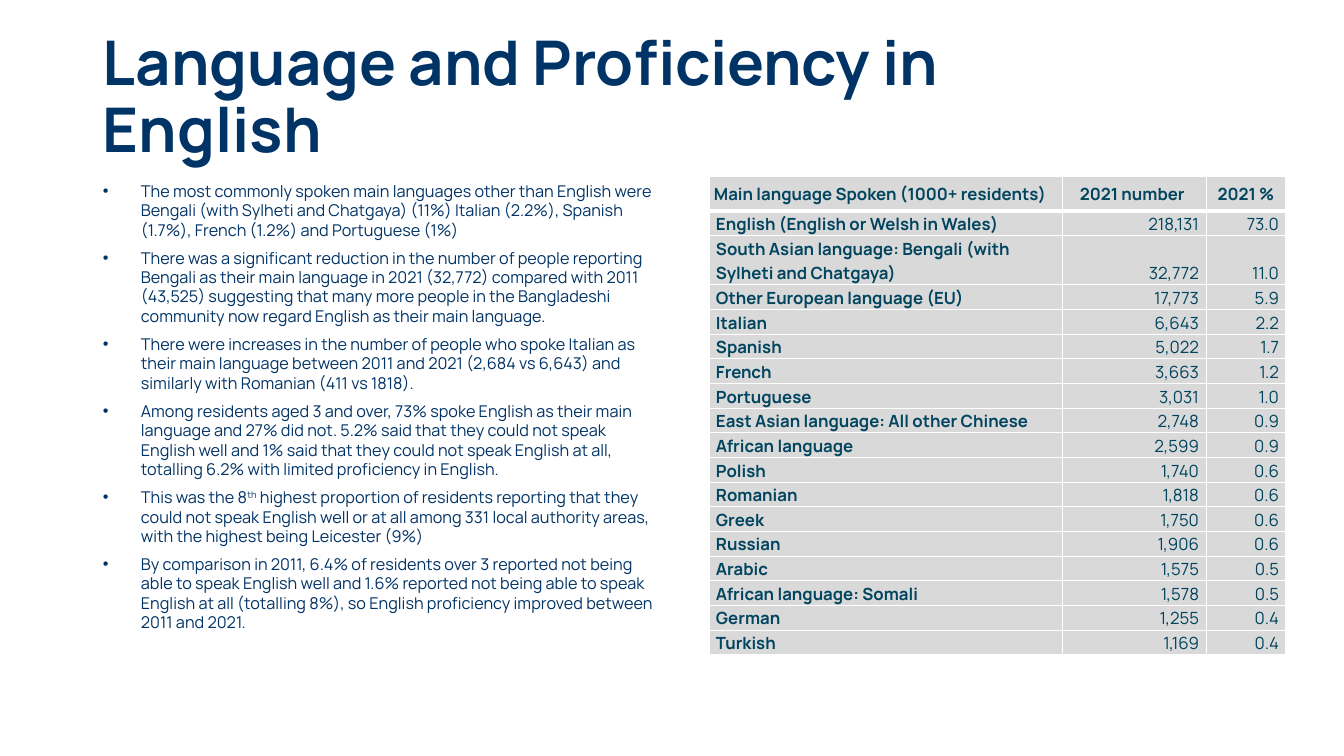
from lxml import etree
from pptx import Presentation, util as u
from pptx.dml.color import RGBColor
from pptx.enum import text as t
from pptx.oxml import ns

TITLE = "Language and Proficiency in English"
POINTS = [
    ["The most commonly spoken main languages other than English were Bengali (with Sylheti and Chatgaya) (11%) Italian (2.2%), Spanish (1.7%), French (1.2%) and Portuguese (1%)"],
    ["There was a significant reduction in the number of people reporting Bengali as their main language in 2021 (32,772) compared with 2011 (43,525) suggesting that many more people in the Bangladeshi community now regard English as their main language."],
    ["There were increases in the number of people who spoke Italian as their main language between 2011 and 2021 (2,684 vs 6,643) and similarly with Romanian (411 vs 1818)."],
    ["Among residents aged 3 and over, 73% spoke English as their main language and 27% did not. 5.2% said that they could not speak English well and 1% said that they could not speak English at all, totalling 6.2% with limited proficiency in English."],
    ["This was the 8", "th", " highest proportion of residents reporting that they could not speak English well or at all among 331 local authority areas, with the highest being Leicester (9%)"],
    ["By comparison in 2011, 6.4% of residents over 3 reported not being able to speak English well and 1.6% reported not being able to speak English at all (totalling 8%), so English proficiency improved between 2011 and 2021."],
]
ROWS = [
    ("Main language Spoken (1000+ residents)", "2021 number ", "2021 %"),
    ("English (English or Welsh in Wales)", "218,131", "73.0"),
    ("South Asian language: Bengali (with Sylheti and Chatgaya)", "32,772", "11.0"),
    ("Other European language (EU)", "17,773", "5.9"),
    ("Italian", "6,643", "2.2"),
    ("Spanish", "5,022", "1.7"),
    ("French", "3,663", "1.2"),
    ("Portuguese", "3,031", "1.0"),
    ("East Asian language: All other Chinese", "2,748", "0.9"),
    ("African language", "2,599", "0.9"),
    ("Polish", "1,740", "0.6"),
    ("Romanian", "1,818", "0.6"),
    ("Greek", "1,750", "0.6"),
    ("Russian", "1,906", "0.6"),
    ("Arabic", "1,575", "0.5"),
    ("African language: Somali", "1,578", "0.5"),
    ("German", "1,255", "0.4"),
    ("Turkish", "1,169", "0.4"),
]
COLS = [353, 144, 80]
HEAD, BODY = 35, 444
LINES = [2 if "South" in row[0] else 1 for row in ROWS[1:]]
HUES = {"navy": "003366", "teal": "00445E", "grey": "D9D9D9", "white": "FFFFFF"}
PX = 914400 / 100.8


def px(n):
    return u.Emu(round(n * PX))


def put(obj, **form):
    for key, val in form.items():
        setattr(obj, key, val)


def style(font, size, hue, bold):
    put(font, name="Manrope", size=u.Pt(size), bold=bold)
    font.color.rgb = RGBColor.from_string(HUES[hue])


def box(slide, area, anchor):
    frame = slide.shapes.add_textbox(*map(px, area)).text_frame
    put(frame, word_wrap=True, vertical_anchor=anchor)
    return frame


def bullet(par):
    prop = par._p.get_or_add_pPr()
    put_in = {"marL": 38, "indent": -38}
    for key, val in put_in.items():
        prop.set(key, str(px(val)))
    etree.SubElement(prop, ns.qn("a:buFont"), typeface="Arial")
    etree.SubElement(prop, ns.qn("a:buChar"), char="•")


def edge(cell, top, base):
    prop = cell._tc.get_or_add_tcPr()
    sides = {"L": 0.75, "R": 0.75, "T": top, "B": base}
    for spot, (side, wide) in enumerate(sides.items()):
        line = etree.Element(ns.qn("a:ln" + side), w=str(u.Pt(wide)))
        fill = etree.SubElement(line, ns.qn("a:solidFill"))
        etree.SubElement(fill, ns.qn("a:srgbClr"), val=HUES["white"])
        prop.insert(spot, line)


def heading(slide):
    par = box(slide, (93, 26, 1077, 146), t.MSO_ANCHOR.MIDDLE).paragraphs[0]
    par.line_spacing = 0.9
    run = par.add_run()
    run.text = TITLE
    style(run.font, 44, "navy", True)


def points(slide):
    frame = box(slide, (93, 176, 580, 519), t.MSO_ANCHOR.TOP)
    for i, parts in enumerate(POINTS):
        par = frame.add_paragraph() if i else frame.paragraphs[0]
        put(par, line_spacing=1.0, space_before=u.Pt(6 if i else 0))
        bullet(par)
        for part in parts:
            run = par.add_run()
            run.text = part
            style(run.font, 11.6, "navy", False)
            if part == "th":
                run.font._element.set("baseline", "30000")


def table(slide):
    highs = [HEAD] + [BODY * n / sum(LINES) for n in LINES]
    area = (709, 176, sum(COLS), HEAD + BODY)
    grid = slide.shapes.add_table(len(ROWS), len(COLS), *map(px, area)).table
    put(grid, first_row=False, horz_banding=False)
    for col, wide in zip(grid.columns, COLS):
        col.width = px(wide)
    for i, (row, high) in enumerate(zip(ROWS, highs)):
        grid.rows[i].height = px(high)
        for j, word in enumerate(row):
            cell = grid.cell(i, j)
            head = i == 0
            side, top = (5, 5) if head and j == 0 else (7, 0)
            put(cell, text=word, margin_left=px(side), margin_right=px(side),
                margin_top=px(top), margin_bottom=px(top),
                vertical_anchor=t.MSO_ANCHOR.MIDDLE if head else t.MSO_ANCHOR.BOTTOM)
            cell.fill.solid()
            cell.fill.fore_color.rgb = RGBColor.from_string(HUES["grey"])
            edge(cell, 3 if i == 1 else 0.75, 3 if head else 0.75)
            par = cell.text_frame.paragraphs[0]
            far = t.PP_ALIGN.CENTER if head else t.PP_ALIGN.RIGHT
            put(par, line_spacing=1.07, space_after=u.Pt(8),
                alignment=far if j else t.PP_ALIGN.LEFT)
            style(par.runs[0].font, 12, "teal", head or j == 0)


def main():
    deck = Presentation()
    put(deck, slide_width=px(1344), slide_height=px(756))
    slide = deck.slides.add_slide(deck.slide_layouts[6])
    heading(slide)
    points(slide)
    table(slide)
    deck.save("out.pptx")


if __name__ == "__main__":
    main()
